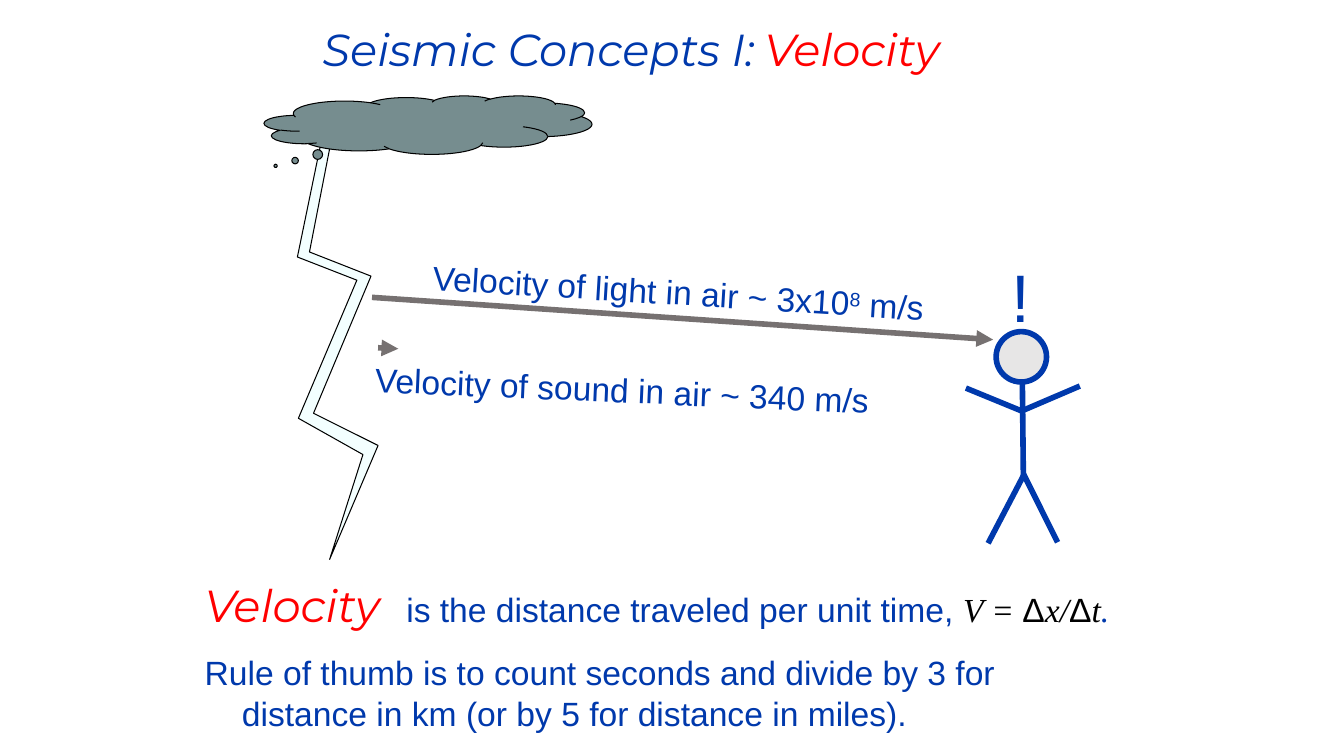
from collections import namedtuple

from lxml.etree import SubElement
from pptx import Presentation
from pptx.dml.color import RGBColor
from pptx.enum.shapes import MSO_CONNECTOR as Connector, MSO_SHAPE as Preset
from pptx.enum.text import MSO_ANCHOR as Anchor, MSO_AUTO_SIZE as AutoSize, PP_ALIGN as Align
from pptx.oxml.ns import qn
from pptx.util import Pt

PX = 9144
BLUE, RED, BLACK, GREY = "0039AC", "FF0000", "000000", "767171"

Style = namedtuple("Style", "font size colour italic raised", defaults=(False, 0))
LABEL = Style("Arial", 24, BLUE)
SHOUT = Style("Arial", 48, BLUE)
HEADING = Style("Montserrat", 32, BLUE, True)
KEYWORD = HEADING._replace(colour=RED)
FORMULA = Style("Times New Roman", 24, BLACK, True)
DELTA = LABEL._replace(colour=BLACK)


def rgb(colour):
    return RGBColor.from_string(colour)


def emu(*lengths):
    return [length * PX for length in lengths]


class SlideBuilder:
    def __init__(self, width, height):
        self.presentation = Presentation()
        self.presentation.slide_width, self.presentation.slide_height = emu(width, height)
        self.slide = self.presentation.slides.add_slide(self.presentation.slide_layouts[1])
        self.shapes = self.slide.shapes

    def set_font(self, font, style):
        font.name = style.font
        font.size = Pt(style.size)
        font.italic = style.italic
        font.color.rgb = rgb(style.colour)

    def prepare(self, shape, wrap=False):
        frame = shape.text_frame
        frame.word_wrap = wrap
        frame.auto_size = AutoSize.NONE
        frame.vertical_anchor = Anchor.TOP
        return frame

    def fill_paragraph(self, paragraph, runs, before=0, indent=0, tab=None):
        paragraph.alignment = Align.LEFT
        paragraph.space_before = Pt(before)
        properties = paragraph._p.get_or_add_pPr()
        properties.set("marL", str(indent * PX))
        properties.set("indent", "0")
        SubElement(properties, qn("a:buNone"))
        if tab:
            stops = SubElement(properties, qn("a:tabLst"))
            SubElement(stops, qn("a:tab"), pos=str(tab * PX), algn="l")
        shared = {style._replace(raised=0) for _, style in runs}
        mixed = len(shared) > 1
        if not mixed:
            self.set_font(paragraph.font, shared.pop())
        for text, style in runs:
            run = paragraph.add_run()
            run.text = text
            if mixed:
                self.set_font(run.font, style)
            if style.raised:
                run._r.get_or_add_rPr().set("baseline", str(style.raised * 1000))

    def place(self, shape, box):
        shape.left, shape.top, shape.width, shape.height = emu(*box)

    def title(self, box, runs):
        shape = self.shapes.title
        self.place(shape, box)
        self.fill_paragraph(self.prepare(shape).paragraphs[0], runs)

    def body(self, box, paragraphs):
        shape = self.slide.placeholders[1]
        self.place(shape, box)
        frame = self.prepare(shape, wrap=True)
        for number, (runs, layout) in enumerate(paragraphs):
            paragraph = frame.add_paragraph() if number else frame.paragraphs[0]
            self.fill_paragraph(paragraph, runs, **layout)

    def label(self, box, runs, rotation=0):
        shape = self.shapes.add_textbox(*emu(*box))
        shape.rotation = rotation
        self.fill_paragraph(self.prepare(shape).paragraphs[0], runs)

    def paint(self, shape, fill, colour, weight):
        shape.shadow.inherit = False
        shape.fill.solid()
        shape.fill.fore_color.rgb = rgb(fill)
        shape.line.color.rgb = rgb(colour)
        shape.line.width = Pt(weight)

    def preset(self, kind, box, fill, colour, weight, adjustments=()):
        shape = self.shapes.add_shape(kind, *emu(*box))
        for number, value in enumerate(adjustments):
            shape.adjustments[number] = value
        self.paint(shape, fill, colour, weight)

    def outline(self, points, fill, colour, weight):
        builder = self.shapes.build_freeform(*points[0], scale=PX)
        builder.add_line_segments(points[1:], close=True)
        self.paint(builder.convert_to_shape(), fill, colour, weight)

    def line(self, start, end, colour, weight=4, arrow=False):
        connector = self.shapes.add_connector(Connector.STRAIGHT, *emu(*start, *end))
        connector.line.color.rgb = rgb(colour)
        connector.line.width = Pt(weight)
        if arrow:
            SubElement(connector.line._get_or_add_ln(), qn("a:tailEnd"), type="triangle")
        SubElement(connector._element.spPr, qn("a:effectLst"))


def main():
    page = SlideBuilder(1333, 750)
    page.title((310, 17, 729, 64), [
        ("Seismic Concepts I:", HEADING), (" ", LABEL), ("Velocity", KEYWORD)])
    page.body((193, 568, 947, 165), [
        ([("Velocity", KEYWORD),
          ("\tis the distance traveled per unit time, ", LABEL),
          ("V = ", FORMULA), ("Δ", DELTA), ("x/", FORMULA), ("Δ", DELTA), ("t", FORMULA),
          (".", FORMULA._replace(colour=BLUE))], {"tab": 192}),
        ([("Rule of thumb is to count seconds and divide by 3 for", LABEL)], {"before": 15}),
        ([("distance in km (or by 5 for distance in miles).", LABEL)], {"indent": 37}),
    ])

    lightning = [(321, 129), (295, 255), (354, 278), (296, 415), (360, 451), (327, 555),
                 (375, 442), (311, 410), (368, 274), (307, 250), (330, 132)]
    page.outline(lightning, "F3FFFF", BLACK, 0.75)
    page.preset(Preset.CLOUD_CALLOUT, (262, 95, 325, 58), "768D8F", BLACK, 0.75, (-0.465, 0.699))

    page.preset(Preset.OVAL, (988, 329, 50, 50), "E7E6E6", BLUE, 4)
    limbs = [((1014, 378), (1015, 474)),
             ((1014, 408), (958, 385)), ((1015, 407), (1071, 383)),
             ((1015, 472), (980, 539)), ((1015, 470), (1049, 538))]
    for start, end in limbs:
        page.line(start, end, BLUE)
    page.label((993, 248, 39, 90), [("!", SHOUT)])

    page.line((369, 295), (985, 337), GREY, arrow=True)
    page.label((419, 265, 511, 50), [
        ("Velocity of light in air ~ 3x10", LABEL),
        ("8", LABEL._replace(raised=30)), (" m/s", LABEL)], 3.6)
    page.line((375, 345), (395, 346), GREY, arrow=True)
    page.label((362, 362, 512, 50), [("Velocity of sound in air ~ 340 m/s", LABEL)], 2.6)

    page.presentation.save("out.pptx")


if __name__ == "__main__":
    main()
